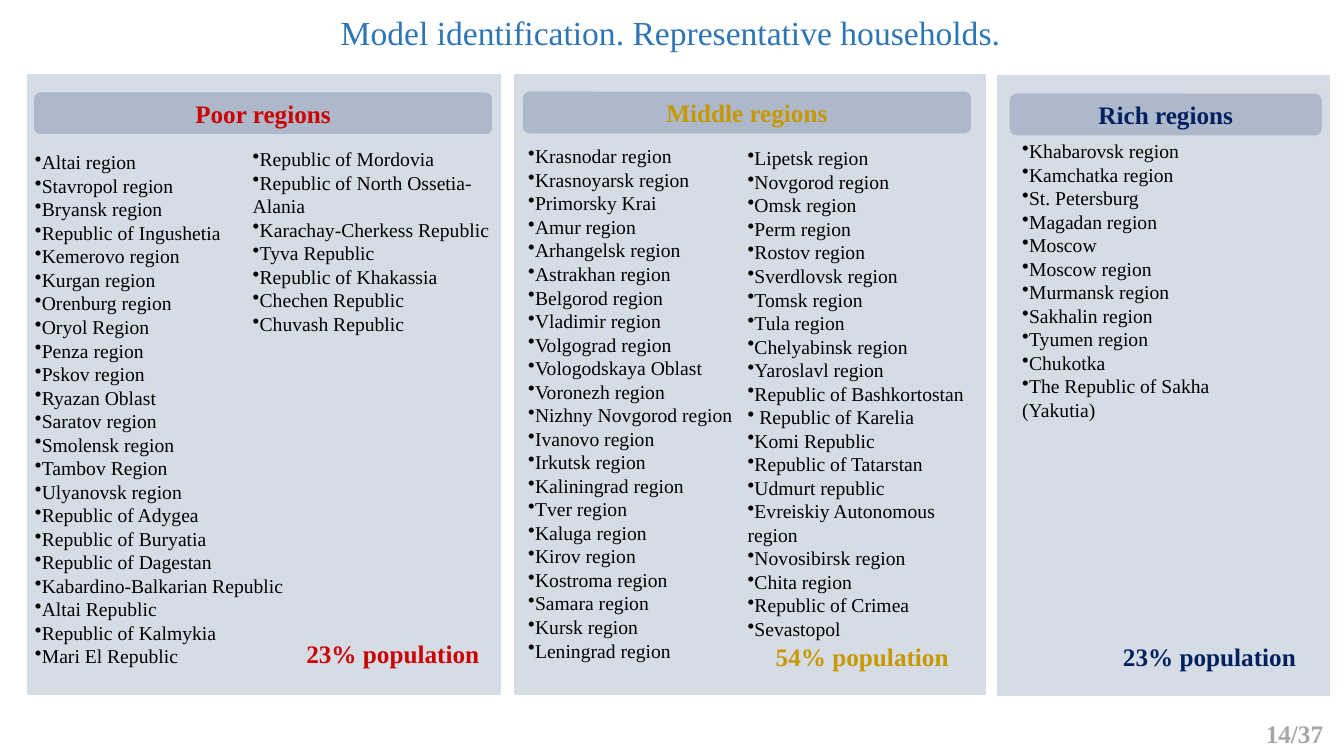
"""Builds the slide that groups representative households by region."""
from dataclasses import dataclass

from lxml.etree import SubElement
from pptx import Presentation
from pptx.dml.color import RGBColor
from pptx.enum.shapes import MSO_SHAPE
from pptx.enum.text import MSO_ANCHOR, PP_ALIGN
from pptx.oxml.ns import qn
from pptx.util import Cm, Pt

FONT = "Times New Roman"
PANEL_FILL = "D6DCE5"
HEADER_FILL = "ADB9CA"
PANEL_HEIGHT = 15.62
HEADER_HEIGHT = 1.09
LINE_HEIGHT = 0.6


@dataclass
class Column:
    """A bulleted list, placed relative to its panel, in centimetres."""
    left: float
    top: float
    width: float
    names: list


@dataclass
class Panel:
    """A group of regions; header and share are placed relative to it."""
    title: str
    color: str
    box: tuple
    header: tuple
    share: str
    share_at: tuple
    columns: list


PANELS = [
    Panel("Poor regions", "CC0000", (0.71, 1.88, 11.91), (0.13, 0.43, 11.58),
          "23% population", (6.76, 14.07), [
              Column(-0.08, 1.78, 7.32, [
                  "Altai region", "Stavropol region", "Bryansk region",
                  "Republic of Ingushetia", "Kemerovo region", "Kurgan region",
                  "Orenburg region", "Oryol Region", "Penza region",
                  "Pskov region", "Ryazan Oblast", "Saratov region",
                  "Smolensk region", "Tambov Region", "Ulyanovsk region",
                  "Republic of Adygea", "Republic of Buryatia",
                  "Republic of Dagestan", "Kabardino-Balkarian Republic",
                  "Altai Republic", "Republic of Kalmykia",
                  "Mari El Republic"]),
              Column(5.41, 1.7, 6.58, [
                  "Republic of Mordovia", "Republic of North Ossetia-Alania",
                  "Karachay-Cherkess Republic", "Tyva Republic",
                  "Republic of Khakassia", "Chechen Republic",
                  "Chuvash Republic"])]),
    Panel("Middle regions", "C89800", (12.98, 1.88, 11.84), (0.18, 0.41, 11.33),
          "54% population", (6.32, 14.15), [
              Column(0.08, 1.63, 5.84, [
                  "Krasnodar region", "Krasnoyarsk region", "Primorsky Krai",
                  "Amur region", "Arhangelsk region", "Astrakhan region",
                  "Belgorod region", "Vladimir region", "Volgograd region",
                  "Vologodskaya Oblast", "Voronezh region",
                  "Nizhny Novgorod region", "Ivanovo region",
                  "Irkutsk region", "Kaliningrad region", "Tver region",
                  "Kaluga region", "Kirov region", "Kostroma region",
                  "Samara region", "Kursk region", "Leningrad region"]),
              Column(5.61, 1.68, 6.53, [
                  "Lipetsk region", "Novgorod region", "Omsk region",
                  "Perm region", "Rostov region", "Sverdlovsk region",
                  "Tomsk region", "Tula region", "Chelyabinsk region",
                  "Yaroslavl region", "Republic of Bashkortostan",
                  " Republic of Karelia", "Komi Republic",
                  "Republic of Tatarstan", "Udmurt republic",
                  "Evreiskiy Autonomous region", "Novosibirsk region",
                  "Chita region", "Republic of Crimea", "Sevastopol"])]),
    Panel("Rich regions", "002060", (25.15, 1.91, 8.36), (0.28, 0.43, 7.9),
          "23% population", (2.9, 14.12), [
              Column(0.36, 1.47, 6.63, [
                  "Khabarovsk region", "Kamchatka region", "St. Petersburg",
                  "Magadan region", "Moscow", "Moscow region",
                  "Murmansk region", "Sakhalin region", "Tyumen region",
                  "Chukotka", "The Republic of Sakha (Yakutia)"])]),
]


def paint(target, color):
    """Give a fill or a font a solid colour from a hex string."""
    if hasattr(target, "solid"):
        target.solid()
        target.fore_color.rgb = RGBColor.from_string(color)
    else:
        target.color.rgb = RGBColor.from_string(color)


def write(frame, lines, size, color, bold=False, align=PP_ALIGN.LEFT, bullet=None):
    """Write one paragraph per line, all in the same style."""
    frame.word_wrap = True
    frame.text = "\n".join(lines)
    for para in frame.paragraphs:
        para.alignment = align
        para.font.name = FONT
        para.font.size = Pt(size)
        para.font.bold = bold
        paint(para.font, color)
        if bullet:
            properties = para._p.get_or_add_pPr()
            properties.set("marL", "0")
            properties.set("indent", "0")
            mark = SubElement(properties, qn("a:buChar"))
            mark.set("char", bullet)
            properties.remove(mark)
            properties.insert_element_before(mark, "a:tabLst", "a:defRPr", "a:extLst")


def add_text(page, left, top, width, height, lines, size, color, **style):
    """Add a text box, in centimetres."""
    box = page.shapes.add_textbox(Cm(left), Cm(top), Cm(width), Cm(height))
    write(box.text_frame, lines, size, color, **style)


def add_block(page, kind, left, top, width, height, fill):
    """Add a filled shape with a thin pale outline, in centimetres."""
    block = page.shapes.add_shape(kind, Cm(left), Cm(top), Cm(width), Cm(height))
    block.shadow.inherit = False
    paint(block.fill, fill)
    paint(block.line.fill, PANEL_FILL)
    block.line.width = Pt(1)
    return block


def add_panel(page, panel):
    """Place a panel with its header, region lists and population share."""
    left, top, width = panel.box
    add_block(page, MSO_SHAPE.RECTANGLE, left, top, width, PANEL_HEIGHT, PANEL_FILL)

    header_left, header_top, header_width = panel.header
    header = add_block(page, MSO_SHAPE.ROUNDED_RECTANGLE, left + header_left,
                       top + header_top, header_width, HEADER_HEIGHT, HEADER_FILL)
    header.text_frame.vertical_anchor = MSO_ANCHOR.MIDDLE
    write(header.text_frame, [panel.title], 18, panel.color, bold=True,
          align=PP_ALIGN.CENTER)

    for column in panel.columns:
        add_text(page, left + column.left, top + column.top, column.width,
                 len(column.names) * LINE_HEIGHT, column.names, 14, "000000", bullet="•")

    share_left, share_top = panel.share_at
    add_text(page, left + share_left, top + share_top, 5.13, 1.02,
             [panel.share], 18, panel.color, bold=True)


def main():
    """Build and save the deck."""
    deck = Presentation()
    deck.slide_width, deck.slide_height = Cm(33.87), Cm(19.05)
    page = deck.slides.add_slide(deck.slide_layouts[6])
    for panel in PANELS:
        add_panel(page, panel)
    add_text(page, 0.91, 0.18, 31.98, 1.27,
             ["Model identification. Representative households."], 24, "2E75B6",
             align=PP_ALIGN.CENTER)
    add_text(page, 31.65, 17.98, 2.21, 1.02, ["14/37"], 18, "A6A6A6", bold=True)
    deck.save("out.pptx")


if __name__ == "__main__":
    main()
